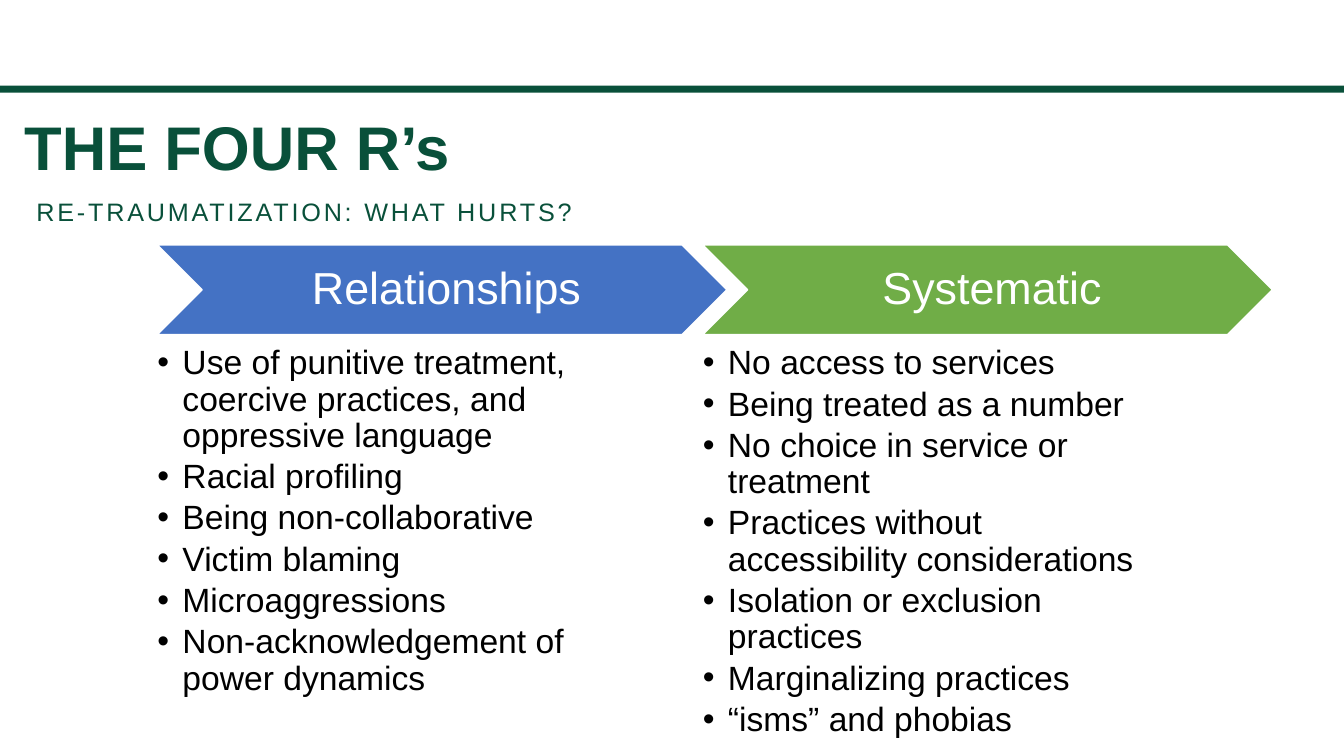
from lxml import etree
from pptx import Presentation
from pptx import util as u
from pptx.dml.color import RGBColor
from pptx.enum import shapes, text
from pptx.oxml.ns import qn

WIDTH, HEIGHT = 13.33, 7.5
GREEN, BLUE, LEAF, WHITE, BLACK = "09503A", "4472C4", "70AD47", "FFFFFF", "000000"
FONT = "Arial"
COLUMN_LEFT, COLUMN_TOP, COLUMN_STEP = 1.56, 2.43, 5.41
CHEVRON_WIDTH, CHEVRON_HEIGHT = 5.65, 0.89
LIST_WIDTH, LIST_HEIGHT, LIST_DROP = 4.52, 3.82, 1.0
PLACEHOLDER_INSETS = (0.04, 0.02, 0.04, 0.02)

COLUMNS = [
    ("Relationships", BLUE, 2, [
        "Use of punitive treatment, coercive practices, and oppressive language",
        "Racial profiling",
        "Being non-collaborative",
        "Victim blaming",
        "Microaggressions",
        "Non-acknowledgement of power dynamics",
    ]),
    ("Systematic", LEAF, 4, [
        "No access to services",
        "Being treated as a number",
        "No choice in service or treatment",
        "Practices without accessibility considerations",
        "Isolation or exclusion practices",
        "Marginalizing practices",
        "“isms” and phobias",
    ]),
]


def colour(hex_value):
    return RGBColor.from_string(hex_value)


def place(shape, left, top, width, height):
    shape.left, shape.top = u.Inches(left), u.Inches(top)
    shape.width, shape.height = u.Inches(width), u.Inches(height)


def style_shape(shape, fill, line=None):
    shape.shadow.inherit = False
    shape.fill.solid()
    shape.fill.fore_color.rgb = colour(fill)
    if line:
        shape.line.color.rgb = colour(line)
        shape.line.width = u.Pt(1)
    else:
        shape.line.fill.background()


def set_bullet(paragraph, indent):
    properties = paragraph._p.get_or_add_pPr()
    properties.set("marL", str(u.Inches(indent)))
    properties.set("indent", str(-u.Inches(indent)))
    if indent:
        etree.SubElement(properties, qn("a:buFont"), typeface=FONT)
        etree.SubElement(properties, qn("a:buChar"), char="•")
    else:
        etree.SubElement(properties, qn("a:buNone"))


def write(shape, lines, size, color, bold=False, align=text.PP_ALIGN.LEFT,
          anchor=text.MSO_ANCHOR.TOP, insets=(0, 0, 0, 0), indent=0,
          after=0, tracking=0):
    frame = shape.text_frame
    frame.word_wrap = True
    frame.auto_size = text.MSO_AUTO_SIZE.NONE
    frame.vertical_anchor = anchor
    (frame.margin_left, frame.margin_top,
     frame.margin_right, frame.margin_bottom) = map(u.Inches, insets)
    for number, line in enumerate(lines):
        paragraph = frame.paragraphs[0] if number == 0 else frame.add_paragraph()
        set_bullet(paragraph, indent)
        paragraph.alignment = align
        paragraph.line_spacing = 0.9
        paragraph.space_before, paragraph.space_after = u.Pt(0), u.Pt(after)
        run = paragraph.add_run()
        run.text = line
        run.font.name, run.font.size, run.font.bold = FONT, u.Pt(size), bold
        run.font.color.rgb = colour(color)
        if tracking:
            run._r.get_or_add_rPr().set("spc", str(tracking * 100))


def add_header(slide, left, top, width):
    # Rule across the slide
    rule = slide.shapes.add_shape(shapes.MSO_SHAPE.RECTANGLE, 0, 0, 0, 0)
    place(rule, 0, top, WIDTH, 0.07)
    style_shape(rule, GREEN)
    # Title and subtitle
    title = slide.shapes.title
    place(title, left, top + 0.29, width, 1.13)
    write(title, ["THE FOUR R’s"], 44, GREEN, bold=True, insets=PLACEHOLDER_INSETS)
    subtitle = slide.placeholders[1]
    place(subtitle, left + 0.12, top + 1.07, width, 0.35)
    write(subtitle, ["RE-TRAUMATIZATION: WHAT HURTS?"], 18, GREEN,
          anchor=text.MSO_ANCHOR.BOTTOM, insets=PLACEHOLDER_INSETS, tracking=2)


def add_column(slide, left, top, heading, fill, list_index, harms):
    # Chevron heading
    chevron = slide.shapes.add_shape(shapes.MSO_SHAPE.CHEVRON, 0, 0, 0, 0)
    place(chevron, left, top, CHEVRON_WIDTH, CHEVRON_HEIGHT)
    style_shape(chevron, fill, WHITE)
    write(chevron, [heading], 32, WHITE, align=text.PP_ALIGN.CENTER,
          anchor=text.MSO_ANCHOR.MIDDLE, insets=(0.14, 0.05, 0.05, 0.05))
    # Bulleted list
    harm_list = slide.placeholders[list_index]
    place(harm_list, left, top + LIST_DROP, LIST_WIDTH, LIST_HEIGHT)
    write(harm_list, harms, 24, BLACK, indent=0.25, after=3.6)


def main():
    deck = Presentation()
    deck.slide_width, deck.slide_height = u.Inches(WIDTH), u.Inches(HEIGHT)
    slide = deck.slides.add_slide(deck.slide_layouts[4])
    spare_heading = slide.placeholders[3]._element
    spare_heading.getparent().remove(spare_heading)

    add_header(slide, 0.2, 0.85, 12)
    for number, column in enumerate(COLUMNS):
        add_column(slide, COLUMN_LEFT + number * COLUMN_STEP, COLUMN_TOP, *column)
    deck.save("out.pptx")


if __name__ == "__main__":
    main()
